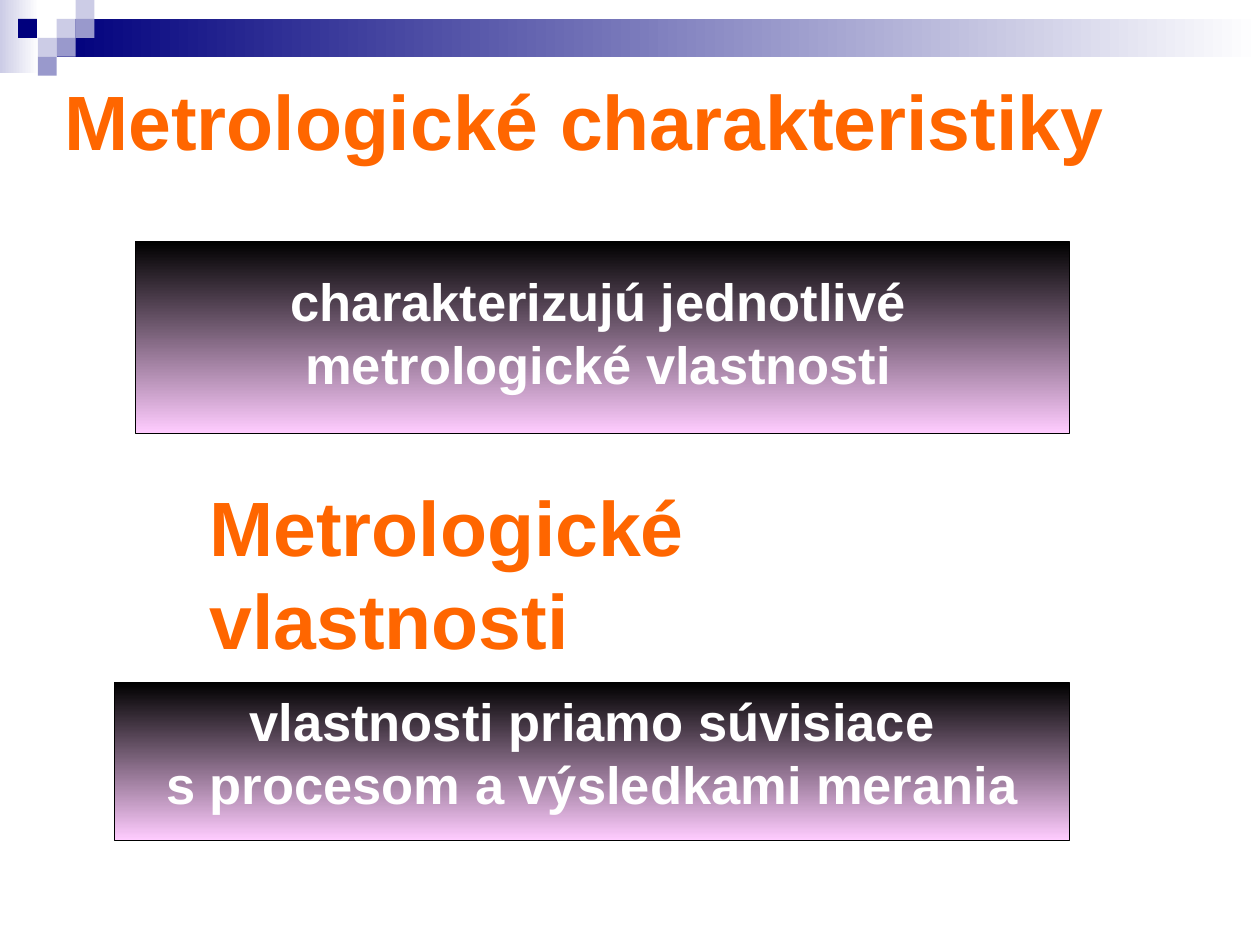
"""Build the slide on metrological characteristics and properties."""
from dataclasses import dataclass

from pptx import Presentation
from pptx.dml.color import RGBColor
from pptx.enum.shapes import MSO_SHAPE
from pptx.enum.text import MSO_ANCHOR, MSO_AUTO_SIZE, PP_ALIGN
from pptx.shapes.autoshape import Shape
from pptx.slide import Slide
from pptx.util import Pt

RECTANGLE = MSO_SHAPE.RECTANGLE
TOP, MIDDLE = MSO_ANCHOR.TOP, MSO_ANCHOR.MIDDLE
LEFT, CENTER = PP_ALIGN.LEFT, PP_ALIGN.CENTER
NO_AUTOFIT = MSO_AUTO_SIZE.NONE
TITLE_ONLY = 5
RIGHTWARD, DOWNWARD = 0, 270


@dataclass(frozen=True)
class Theme:
    """Colours, font and type sizes of the slide."""

    font: str = "Arial"
    heading_size: float = 44
    panel_size: float = 30
    heading: str = "FF6600"
    white: str = "FFFFFF"
    black: str = "000000"
    pink: str = "FFCCFF"
    navy: str = "00007D"
    violet: str = "9999CC"
    lavender: str = "CCCCE6"


@dataclass(frozen=True)
class Box:
    """Position and size in points."""

    left: float
    top: float
    width: float
    height: float

    def lengths(self) -> tuple[Pt, Pt, Pt, Pt]:
        """Return the four lengths as Pt values."""
        return Pt(self.left), Pt(self.top), Pt(self.width), Pt(self.height)


@dataclass(frozen=True)
class Panel:
    """A gradient panel with its centred lines of text."""

    frame: Box
    text_box: Box
    lines: tuple[str, ...]


@dataclass(frozen=True)
class Tile:
    """A small square of the corner mosaic."""

    left: float
    top: float
    color: str


THEME = Theme()
TILE_SIZE = 10.8
TILES = (
    Tile(32.4, 10.8, THEME.lavender),
    Tile(43.2, 0, THEME.lavender),
    Tile(43.2, 10.8, THEME.violet),
    Tile(21.6, 21.6, THEME.lavender),
    Tile(10.3, 10.8, THEME.navy),
    Tile(32.4, 21.6, THEME.violet),
    Tile(21.6, 32.4, THEME.violet),
)
PANELS = (
    Panel(
        Box(65.5, 390.2, 545.8, 90),
        Box(77.4, 390.2, 522, 79.2),
        ("vlastnosti priamo súvisiace", "s procesom a výsledkami merania"),
    ),
    Panel(
        Box(77.4, 138.2, 533.9, 109.4),
        Box(42, 150, 600, 79.2),
        ("charakterizujú jednotlivé", "metrologické vlastnosti"),
    ),
)


def add_rectangle(slide: Slide, box: Box) -> Shape:
    """Add a rectangle without shadow or outline."""
    shape = slide.shapes.add_shape(RECTANGLE, *box.lengths())
    shape.shadow.inherit = False
    shape.line.fill.background()
    return shape


def add_gradient(slide: Slide, box: Box, start: str, end: str, angle: float) -> Shape:
    """Add a rectangle filled with a two-colour linear gradient."""
    shape = add_rectangle(slide, box)
    shape.fill.gradient()
    shape.fill.gradient_angle = angle
    for stop, color in zip(shape.fill.gradient_stops, (start, end)):
        stop.color.rgb = RGBColor.from_string(color)
    return shape


def add_tile(slide: Slide, tile: Tile) -> None:
    """Add one solid square of the mosaic."""
    shape = add_rectangle(slide, Box(tile.left, tile.top, TILE_SIZE, TILE_SIZE))
    shape.fill.solid()
    shape.fill.fore_color.rgb = RGBColor.from_string(tile.color)


def write_text(
    shape: Shape,
    lines: tuple[str, ...],
    size: float,
    color: str,
    alignment: PP_ALIGN,
    anchor: MSO_ANCHOR,
) -> None:
    """Write bold paragraphs into a shape."""
    frame = shape.text_frame
    frame.text = "\n".join(lines)
    frame.word_wrap = True
    frame.auto_size = NO_AUTOFIT
    frame.vertical_anchor = anchor
    for paragraph in frame.paragraphs:
        paragraph.alignment = alignment
        paragraph.font.name = THEME.font
        paragraph.font.size = Pt(size)
        paragraph.font.bold = True
        paragraph.font.color.rgb = RGBColor.from_string(color)


def add_panel(slide: Slide, panel: Panel) -> None:
    """Add an outlined gradient panel and its text."""
    shape = add_gradient(slide, panel.frame, THEME.black, THEME.pink, DOWNWARD)
    shape.line.color.rgb = RGBColor.from_string(THEME.black)
    shape.line.width = Pt(0.75)
    text_box = slide.shapes.add_textbox(*panel.text_box.lengths())
    write_text(text_box, panel.lines, THEME.panel_size, THEME.white, CENTER, TOP)


def main() -> None:
    """Build and save the presentation."""
    presentation = Presentation()
    presentation.slide_width, presentation.slide_height = Pt(720), Pt(540)
    slide = presentation.slides.add_slide(presentation.slide_layouts[TITLE_ONLY])

    add_gradient(slide, Box(0, 0, 22.3, 41.8), THEME.lavender, THEME.white, RIGHTWARD)
    add_gradient(slide, Box(32.4, 10.8, 687.6, 21.6), THEME.navy, THEME.white, RIGHTWARD)
    for tile in TILES:
        add_tile(slide, tile)

    title = slide.shapes.title
    title.left, title.top, title.width, title.height = Box(29.5, 38.2, 630, 59.8).lengths()
    write_text(title, ("Metrologické charakteristiky",), THEME.heading_size,
               THEME.heading, LEFT, TOP)

    subheading = slide.shapes.add_textbox(*Box(112.5, 282, 480, 90).lengths())
    write_text(subheading, ("Metrologické vlastnosti",), THEME.heading_size,
               THEME.heading, LEFT, MIDDLE)

    for panel in PANELS:
        add_panel(slide, panel)
    presentation.save("out.pptx")


if __name__ == "__main__":
    main()
